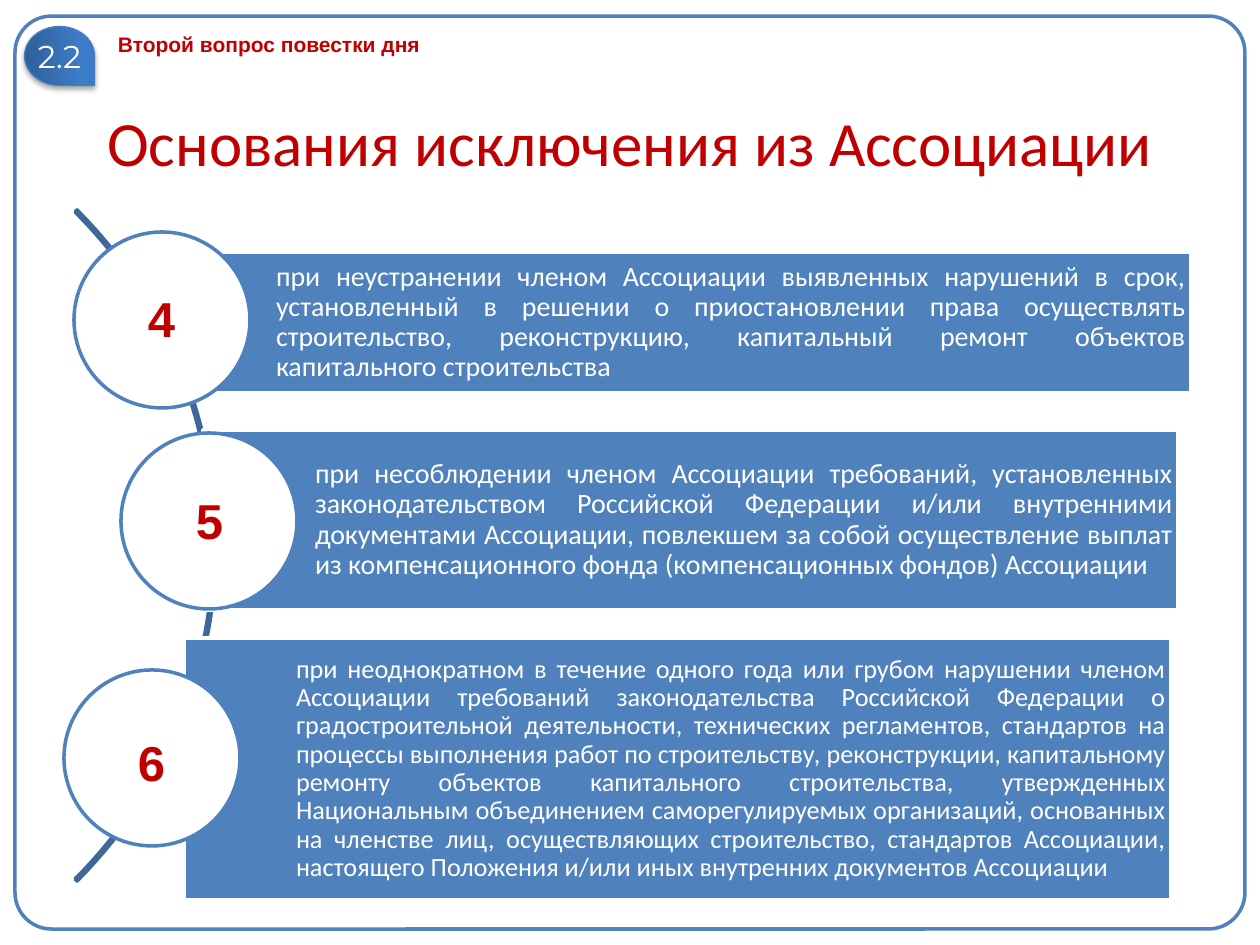
from copy import deepcopy
from dataclasses import dataclass

from lxml.etree import SubElement
from pptx import Presentation
from pptx.dml.color import RGBColor
from pptx.enum.shapes import MSO_SHAPE as Shape
from pptx.enum.text import MSO_ANCHOR as Anchor, MSO_AUTO_SIZE as AutoSize, PP_ALIGN as Align
from pptx.oxml.ns import qn
from pptx.util import Pt


@dataclass(frozen=True)
class Theme:
    blue: str = "4F81BD"
    arc: str = "3F6797"
    badge_line: str = "4B7EBC"
    badge_stops: tuple = ((0, "2F5F99"), (0.8, "3D7CC7"), (1, "3A7CCB"))
    red: str = "C00000"
    white: str = "FFFFFF"
    shadow: str = "000000"
    title_size: int = 36
    number_size: int = 28
    badge_size: int = 18
    body_size: int = 16
    dense_size: int = 15
    label_size: int = 12


theme = Theme()
SCALE = 914400 / 126


def px(*lengths):
    return [round(length * SCALE) for length in lengths]


def write(box, text, size, color, font="Calibri", bold=False, align=Align.LEFT,
          anchor=Anchor.TOP, insets=(13, 6, 13, 6), wrap=True, grow=False, spacing=None):
    frame = box.text_frame
    frame.word_wrap = wrap
    frame.auto_size = AutoSize.SHAPE_TO_FIT_TEXT if grow else AutoSize.NONE
    frame.vertical_anchor = anchor
    frame.margin_left, frame.margin_top, frame.margin_right, frame.margin_bottom = px(*insets)
    para = frame.paragraphs[0]
    para.alignment = align
    if spacing:
        para.line_spacing = spacing
    span = para.add_run()
    span.text = text
    span.font.name = font
    span.font.size = Pt(size)
    span.font.bold = bold
    span.font.color.rgb = RGBColor.from_string(color)


deck = Presentation()
deck.slide_width, deck.slide_height = px(1260, 945)
page = deck.slides.add_slide(deck.slide_layouts[5])
shapes = page.shapes

title = shapes.title
title.left, title.top, title.width, title.height = px(63, 86, 1134, 110)
write(title, "Основания исключения из Ассоциации", theme.title_size, theme.red,
      align=Align.CENTER, anchor=Anchor.MIDDLE)

border = shapes.add_shape(Shape.ROUNDED_RECTANGLE, *px(15, 16, 1230, 913))
border.adjustments[0] = 0.04
border.shadow.inherit = False
border.fill.background()
border.line.color.rgb = RGBColor.from_string(theme.blue)
border.line.width = Pt(2)

badge = shapes.add_shape(Shape.TEAR, *px(30, 21, 59, 70))
badge.rotation = 90
badge.line.color.rgb = RGBColor.from_string(theme.badge_line)
badge.line.width = Pt(0.75)
badge.fill.gradient()
badge.fill.gradient_angle = 90
stop_list = badge.element.spPr.find(qn("a:gradFill")).find(qn("a:gsLst"))
stop_list.append(deepcopy(stop_list[-1]))
for stop, (position, color) in zip(badge.fill.gradient_stops, theme.badge_stops):
    stop.position = position
    stop.color.rgb = RGBColor.from_string(color)
badge.shadow.inherit = False
effects = badge.element.spPr.find(qn("a:effectLst"))
shadow = SubElement(effects, qn("a:outerShdw"), blurRad=str(Pt(3.1)), dist=str(Pt(1.8)),
                    dir="5400000", rotWithShape="0")
shadow_color = SubElement(shadow, qn("a:srgbClr"), val=theme.shadow)
SubElement(shadow_color, qn("a:alpha"), val="35000")
write(badge, "2.2", theme.badge_size, theme.white, font="Montserrat", align=Align.CENTER,
      anchor=Anchor.MIDDLE, insets=(0, 6, 0, 6), wrap=False)
badge.element.txBody.bodyPr.set("vert", "vert270")

agenda = shapes.add_textbox(*px(105, 26, 834, 38))
write(agenda, "Второй вопрос повестки дня", theme.label_size, theme.red,
      font="Arial", bold=True, grow=True)

arc = shapes.add_shape(Shape.BLOCK_ARC, *px(-733, 71, 949, 949))
for index, value in enumerate((189, 27, 0.003)):
    arc.adjustments[index] = value
arc.shadow.inherit = False
arc.fill.background()
arc.line.color.rgb = RGBColor.from_string(theme.arc)
arc.line.width = Pt(2)

grounds = [
    ("4", (164, 252, 1027, 141), (74, 232), (135, 282), theme.body_size,
     "при неустранении членом Ассоциации выявленных нарушений в срок, установленный в решении "
     "о приостановлении права осуществлять строительство, реконструкцию, капитальный ремонт "
     "объектов капитального строительства"),
    ("5", (203, 430, 975, 180), (121, 433), (183, 484), theme.body_size,
     "при несоблюдении членом Ассоциации требований, установленных законодательством Российской "
     "Федерации и/или внутренними документами Ассоциации, повлекшем за собой осуществление "
     "выплат из компенсационного фонда (компенсационных фондов) Ассоциации"),
    ("6", (184, 638, 987, 262), (64, 670), (125, 727), theme.dense_size,
     "при неоднократном в течение одного года или грубом нарушении членом Ассоциации требований "
     "законодательства Российской Федерации о градостроительной деятельности, технических "
     "регламентов, стандартов на процессы выполнения работ по строительству, реконструкции, "
     "капитальному ремонту объектов капитального строительства, утвержденных Национальным "
     "объединением саморегулируемых организаций, основанных на членстве лиц, осуществляющих "
     "строительство, стандартов Ассоциации, настоящего Положения и/или иных внутренних "
     "документов Ассоциации"),
]

for number, bar_frame, circle_corner, number_corner, size, text in grounds:
    bar = shapes.add_shape(Shape.RECTANGLE, *px(*bar_frame))
    circle = shapes.add_shape(Shape.OVAL, *px(*circle_corner, 176, 176))
    for box, fill, line in ((bar, theme.blue, theme.white), (circle, theme.white, theme.blue)):
        box.shadow.inherit = False
        box.fill.solid()
        box.fill.fore_color.rgb = RGBColor.from_string(fill)
        box.line.color.rgb = RGBColor.from_string(line)
        box.line.width = Pt(2)
    write(bar, text, size, theme.white, align=Align.JUSTIFY, anchor=Anchor.MIDDLE,
          insets=(112, 5, 5, 5), spacing=0.9)
    label = shapes.add_textbox(*px(*number_corner, 53, 72))
    write(label, number, theme.number_size, theme.red, font="Arial", bold=True,
          wrap=False, grow=True)

deck.save("out.pptx")
